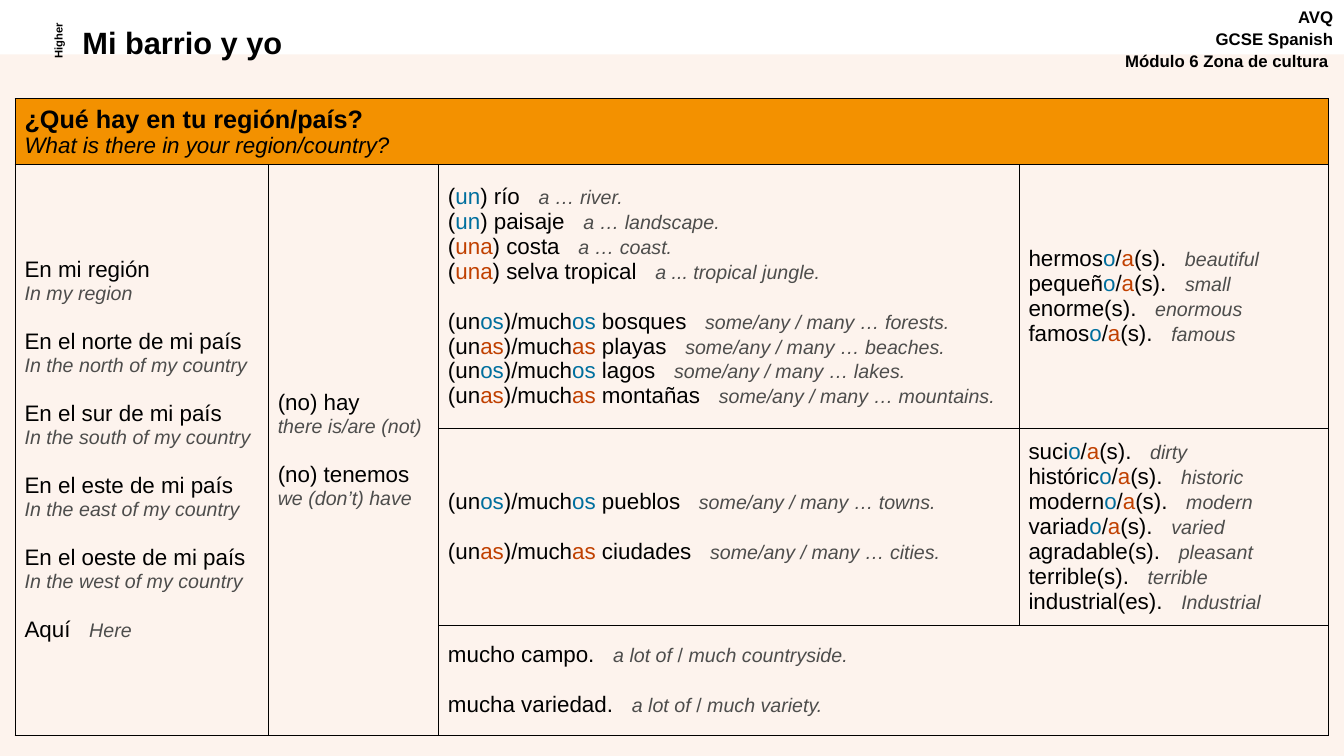
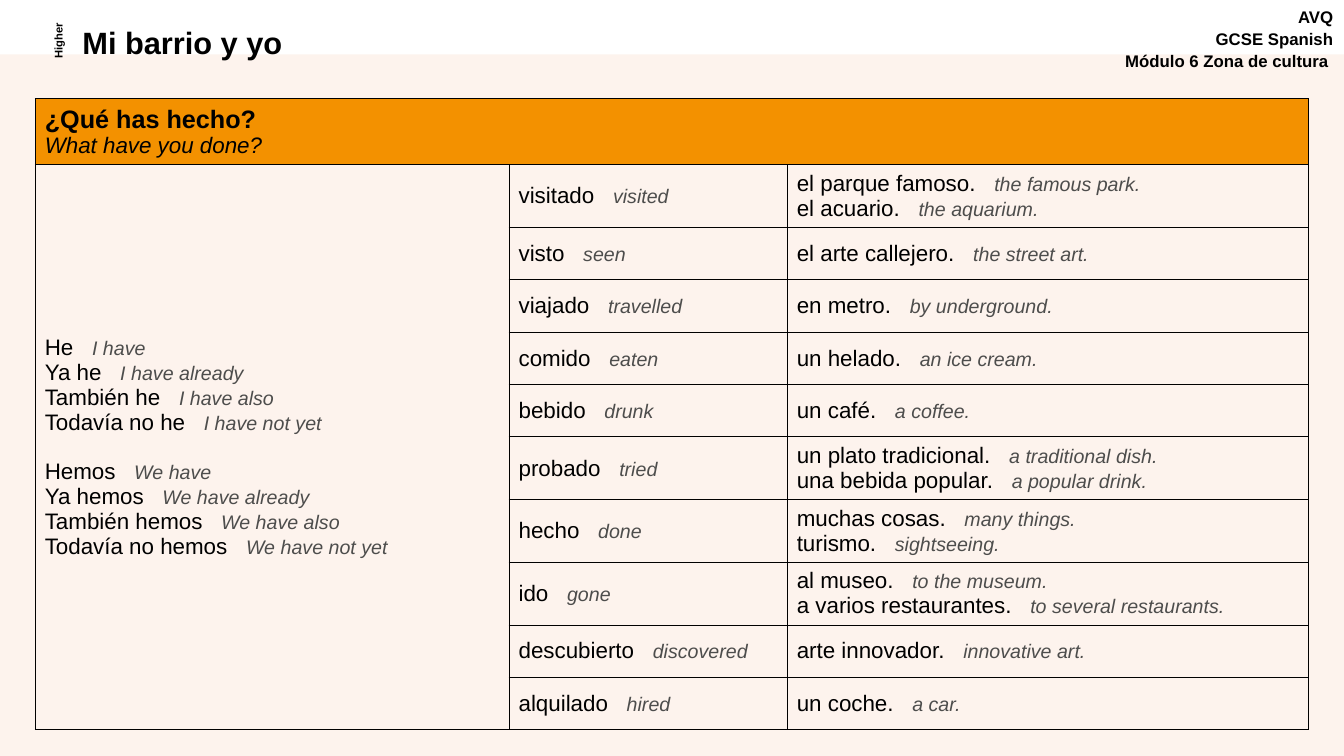
from lxml import etree
from pptx import Presentation
from pptx.dml.color import RGBColor
from pptx.enum import shapes, text
from pptx.oxml import ns
from pptx.util import Cm, Pt

BLACK = RGBColor(0x00, 0x00, 0x00)
CREAM = RGBColor(0xFD, 0xF3, 0xED)
ORANGE = RGBColor(0xF3, 0x91, 0x00)
GREY = RGBColor(0x4D, 0x4D, 0x4C)
MASCULINE = RGBColor(0x00, 0x6F, 0x9E)
FEMININE = RGBColor(0xC0, 0x40, 0x00)

WIDTH, HEIGHT = 33.87, 19.05
BAND_TOP = 1.37
TABLE_TOP = 2.49
ONE_LINE_ROW, TWO_LINE_ROW = 1.32, 1.58

# Notation: "Spanish|English"; *...* marks a gendered ending (Spanish) or
# upright type (English); an empty line separates groups.
PLACES = """En mi región
|In my region

En el norte de mi país
|In the north of my country

En el sur de mi país
|In the south of my country

En el este de mi país
|In the east of my country

En el oeste de mi país
|In the west of my country

Aquí|Here"""

VERBS = """(no) hay
|there is/are (not)

(no) tenemos
|we (don’t) have"""

NATURE = """(*un*) río|a … river.
(*un*) paisaje|a … landscape.
(*una*) costa|a … coast.
(*una*) selva tropical|a ... tropical jungle.

(un*os*)/much*os* bosques|some/any / many … forests.
(un*as*)/much*as* playas|some/any / many … beaches.
(un*os*)/much*os* lagos|some/any / many … lakes.
(un*as*)/much*as* montañas|some/any / many … mountains."""

NATURE_ADJECTIVES = """hermos*o*/*a*(s).|beautiful
pequeñ*o*/*a*(s).|small
enorme(s).|enormous
famos*o*/*a*(s).|famous"""

TOWNS = """(un*os*)/much*os* pueblos|some/any / many … towns.

(un*as*)/much*as* ciudades|some/any / many … cities."""

TOWN_ADJECTIVES = """suci*o*/*a*(s).|dirty
históric*o*/*a*(s).|historic
modern*o*/*a*(s).|modern
variad*o*/*a*(s).|varied
agradable(s).|pleasant
terrible(s).|terrible
industrial(es).|Industrial"""

QUANTITIES = """mucho campo.|a lot of */ *much countryside.

mucha variedad.|a lot of */ *much variety."""

AUXILIARIES = """He|I have
Ya he|I have already
También he|I have also
Todavía no he|I have not yet

Hemos|We have
Ya hemos|We have already
También hemos|We have also
Todavía no hemos|We have not yet"""

ACTIVITIES = [
    ("visitado|visited", "el parque famoso.|the famous park.\nel acuario.|the aquarium."),
    ("visto|seen", "el arte callejero.|the street art."),
    ("viajado|travelled", "en metro.|by underground."),
    ("comido|eaten", "un helado.|an ice cream."),
    ("bebido|drunk", "un café.|a coffee."),
    ("probado|tried",
     "un plato tradicional.|a traditional dish.\nuna bebida popular.|a popular drink."),
    ("hecho|done", "muchas cosas.|many things.\nturismo.|sightseeing."),
    ("ido|gone",
     "al museo.|to the museum.\na varios restaurantes.|to several restaurants."),
    ("descubierto|discovered", "arte innovador.|innovative art."),
    ("alquilado|hired", "un coche.|a car."),
]


class Deck:
    FONT = "Arial"
    SPANISH, ENGLISH = 16, 14
    GROUP_GAP = 17.9
    GLOSS_GAP = "890"  # extra width after one space, in 1/100 pt

    def __init__(self):
        self.prs = Presentation()
        self.prs.slide_width, self.prs.slide_height = Cm(WIDTH), Cm(HEIGHT)
        self.slide = None

    def new_slide(self):
        self.slide = self.prs.slides.add_slide(self.prs.slide_layouts[6])
        band = self.slide.shapes.add_shape(
            shapes.MSO_SHAPE.RECTANGLE,
            Cm(0), Cm(BAND_TOP), Cm(WIDTH), Cm(HEIGHT - BAND_TOP))
        band.shadow.inherit = False
        band.fill.solid()
        band.fill.fore_color.rgb = CREAM
        band.line.fill.background()
        self.label((27.91, 0.05, 5.94, 1.96),
                   ["AVQ", "GCSE Spanish", "Módulo 6 Zona de cultura "],
                   12, text.PP_ALIGN.RIGHT, line_gap=1.2)
        self.label((1.83, 0.48, 17.48, 1.09), ["Mi barrio y yo"], 22)
        self.label((0.46, 0.74, 1.98, 0.56), ["Higher"], 8,
                   text.PP_ALIGN.CENTER, rotation=270)

    def run(self, paragraph, words, size, color=BLACK, bold=False, italic=False):
        run = paragraph.add_run()
        run.text = words
        font = run.font
        font.name, font.size = self.FONT, Pt(size)
        font.bold, font.italic = bold, italic
        font.color.rgb = color
        return run

    def paragraphs(self, frame, lines):
        """Yield each line with its paragraph, reusing the frame's first one."""
        for i, line in enumerate(lines):
            yield line, frame.add_paragraph() if i else frame.paragraphs[0]

    def label(self, box, lines, size, align=text.PP_ALIGN.LEFT, rotation=0, line_gap=0):
        label = self.slide.shapes.add_textbox(*map(Cm, box))
        label.rotation = rotation
        frame = label.text_frame
        frame.word_wrap = True
        for i, (line, paragraph) in enumerate(self.paragraphs(frame, lines)):
            paragraph.alignment = align
            if i and line_gap:
                paragraph.space_before = Pt(line_gap)
            self.run(paragraph, line, size, bold=True)

    def phrase(self, paragraph, line):
        """Write one "Spanish|English" line."""
        spanish, _, english = line.partition("|")
        for i, part in enumerate(spanish.split("*")):
            color = BLACK
            if i % 2:
                color = FEMININE if "a" in part else MASCULINE
            if part:
                self.run(paragraph, part, self.SPANISH, color)
        if spanish and english:
            gap = self.run(paragraph, " ", self.SPANISH)
            gap._r.get_or_add_rPr().set("spc", self.GLOSS_GAP)
        for i, part in enumerate(english.split("*")):
            if part:
                self.run(paragraph, part, self.ENGLISH, GREY, italic=i % 2 == 0)

    def phrases(self, cell, content):
        lines = content.split("\n")
        starts = [i and not lines[i - 1] for i in range(len(lines))]
        kept = [(line, start) for line, start in zip(lines, starts) if line]
        for (line, starts_group), paragraph in self.paragraphs(cell.text_frame, kept):
            if starts_group:
                paragraph.space_before = Pt(self.GROUP_GAP)
            self.phrase(paragraph, line)

    def heading(self, cell, question, translation):
        cell.fill.fore_color.rgb = ORANGE
        frame = cell.text_frame
        self.run(frame.paragraphs[0], question, 18, bold=True)
        self.run(frame.add_paragraph(), translation, 16, italic=True)

    def borders(self, cell, points):
        properties = cell._tc.get_or_add_tcPr()
        for side in ("lnL", "lnR", "lnT", "lnB"):
            line = etree.SubElement(properties, ns.qn("a:" + side), w=str(int(Pt(points))))
            fill = etree.SubElement(line, ns.qn("a:solidFill"))
            etree.SubElement(fill, ns.qn("a:srgbClr"), val=str(BLACK))

    def table(self, left, columns, rows, heading, blocks, last_border=0.75):
        """Blocks are (row, column, row span, column span, content)."""
        table = self.slide.shapes.add_table(
            len(rows), len(columns), Cm(left), Cm(TABLE_TOP),
            Cm(sum(columns)), Cm(sum(rows))).table
        table.first_row = table.horz_banding = False
        for column, width in zip(table.columns, columns):
            column.width = Cm(width)
        for i, (row, height) in enumerate(zip(table.rows, rows)):
            row.height = Cm(height)
            for cell in row.cells:
                self.borders(cell, last_border if i == len(rows) - 1 else 0.75)
                cell.fill.solid()
                cell.fill.fore_color.rgb = CREAM
                cell.vertical_anchor = text.MSO_ANCHOR.MIDDLE
                cell.margin_left = cell.margin_right = Cm(0.24)
                cell.margin_top = cell.margin_bottom = Cm(0.11)
        title = table.cell(0, 0)
        title.merge(table.cell(0, len(columns) - 1))
        self.heading(title, *heading)
        for row, column, row_span, column_span, content in blocks:
            cell = table.cell(row, column)
            if row_span * column_span > 1:
                cell.merge(table.cell(row + row_span - 1, column + column_span - 1))
            self.phrases(cell, content)


def region_slide(deck):
    deck.new_slide()
    deck.table(
        0.38, [6.38, 4.29, 14.63, 7.8], [1.58, 6.64, 4.9, 2.77],
        ("¿Qué hay en tu región/país?", "What is there in your region/country?"),
        [(1, 0, 3, 1, PLACES),
         (1, 1, 3, 1, VERBS),
         (1, 2, 1, 1, NATURE),
         (1, 3, 1, 1, NATURE_ADJECTIVES),
         (2, 2, 1, 1, TOWNS),
         (2, 3, 1, 1, TOWN_ADJECTIVES),
         (3, 2, 1, 2, QUANTITIES)])


def activities_slide(deck):
    deck.new_slide()
    rows = [1.66]
    blocks = [(1, 0, len(ACTIVITIES), 1, AUXILIARIES)]
    for row, (participle, objects) in enumerate(ACTIVITIES, 1):
        rows.append(TWO_LINE_ROW if "\n" in objects else ONE_LINE_ROW)
        blocks += [(row, 1, 1, 1, participle), (row, 2, 1, 1, objects)]
    deck.table(0.89, [11.94, 7.01, 13.13], rows,
               ("¿Qué has hecho?", "What have you done?"), blocks, last_border=1)


def main():
    deck = Deck()
    region_slide(deck)
    activities_slide(deck)
    deck.prs.save("out.pptx")


if __name__ == "__main__":
    main()
